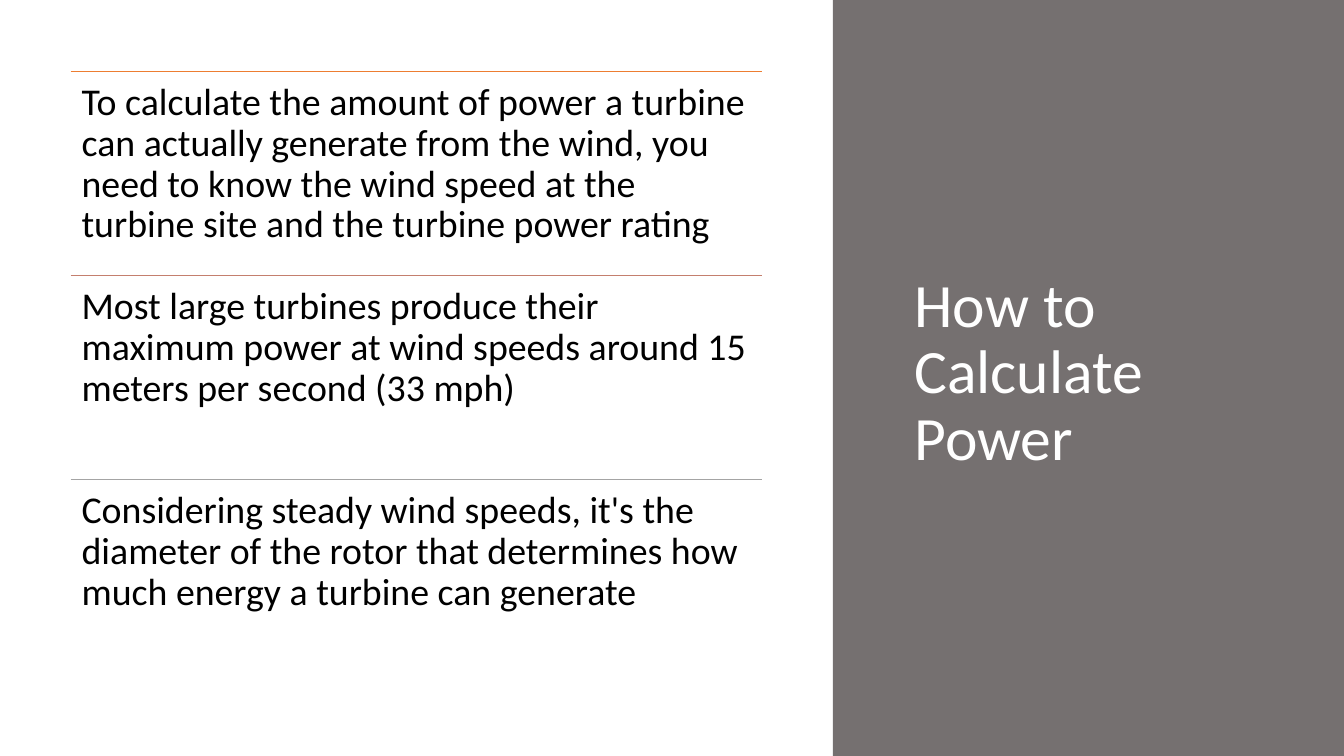
import dataclasses

import pptx
import pptx.dml.color
import pptx.enum.shapes
import pptx.enum.text
import pptx.oxml.ns
import pptx.util
from lxml import etree

Inches = pptx.util.Inches
WIDTH, HEIGHT = 13.33, 7.5
PANEL_LEFT = 8.26
ROW_LEFT, ROW_TOP, ROW_WIDTH, ROW_PITCH = 0.7, 0.71, 6.86, 2.025


@dataclasses.dataclass(frozen=True)
class Theme:
    font: str = "Calibri"
    panel: str = "757070"
    title_color: str = "FFFFFF"
    body_color: str = "000000"
    rules: tuple = ("ED7D31", "C47F6E", "A4A4A4")
    title_size: int = 44
    body_size: int = 27
    rule_width: int = 1


THEME = Theme()
POINTS = (
    "To calculate the amount of power a turbine can actually generate from the wind, "
    "you need to know the wind speed at the turbine site and the turbine power rating",
    "Most large turbines produce their maximum power at wind speeds around "
    "15 meters per second (33 mph)",
    "Considering steady wind speeds, it's the diameter of the rotor that determines "
    "how much energy a turbine can generate",
)


def rgb(code):
    return pptx.dml.color.RGBColor.from_string(code)


def write_text(box, text, *, size, color, anchor, inset):
    """Fill a box with one left-aligned paragraph; inset is (sides, top and bottom)."""
    frame = box.text_frame
    frame.word_wrap = True
    frame.auto_size = pptx.enum.text.MSO_AUTO_SIZE.NONE
    frame.vertical_anchor = anchor
    frame.margin_left = frame.margin_right = Inches(inset[0])
    frame.margin_top = frame.margin_bottom = Inches(inset[1])
    para = frame.paragraphs[0]
    para.alignment = pptx.enum.text.PP_ALIGN.LEFT
    para.line_spacing = 0.9
    span = para.add_run()
    span.text = text
    span.font.name = THEME.font
    span.font.size = pptx.util.Pt(size)
    span.font.color.rgb = rgb(color)


def add_panel(page):
    panel = page.shapes.add_shape(
        pptx.enum.shapes.MSO_SHAPE.RECTANGLE,
        Inches(PANEL_LEFT), 0, Inches(WIDTH - PANEL_LEFT), Inches(HEIGHT))
    panel.shadow.inherit = False
    panel.fill.solid()
    panel.fill.fore_color.rgb = rgb(THEME.panel)
    panel.line.fill.background()
    page.shapes.title.element.addprevious(panel.element)


def place_title(page, text):
    title = page.shapes.title
    title.left, title.top = Inches(8.97), Inches(0.7)
    title.width, title.height = Inches(4.01), Inches(6.02)
    write_text(title, text, size=THEME.title_size, color=THEME.title_color,
               anchor=pptx.enum.text.MSO_ANCHOR.MIDDLE, inset=(0.1, 0.05))


def add_rule(shapes, top, color):
    rule = shapes.add_connector(
        pptx.enum.shapes.MSO_CONNECTOR.STRAIGHT,
        Inches(ROW_LEFT), Inches(top), Inches(ROW_LEFT + ROW_WIDTH), Inches(top))
    rule.line.color.rgb = rgb(color)
    rule.line.width = pptx.util.Pt(THEME.rule_width)
    properties = rule.element.find(pptx.oxml.ns.qn("p:spPr"))
    etree.SubElement(properties, pptx.oxml.ns.qn("a:effectLst"))


def add_ruled_rows(page, points):
    shapes = page.shapes.add_group_shape().shapes
    for row, (text, color) in enumerate(zip(points, THEME.rules)):
        top = ROW_TOP + row * ROW_PITCH
        add_rule(shapes, top, color)
        box = shapes.add_textbox(Inches(ROW_LEFT), Inches(top),
                                 Inches(ROW_WIDTH), Inches(ROW_PITCH))
        write_text(box, text, size=THEME.body_size, color=THEME.body_color,
                   anchor=pptx.enum.text.MSO_ANCHOR.TOP, inset=(0.11, 0.11))


def main():
    deck = pptx.Presentation()
    deck.slide_width, deck.slide_height = Inches(WIDTH), Inches(HEIGHT)
    page = deck.slides.add_slide(deck.slide_layouts.get_by_name("Title Only"))
    add_panel(page)
    place_title(page, "How to Calculate Power")
    add_ruled_rows(page, POINTS)
    deck.save("out.pptx")


if __name__ == "__main__":
    main()
